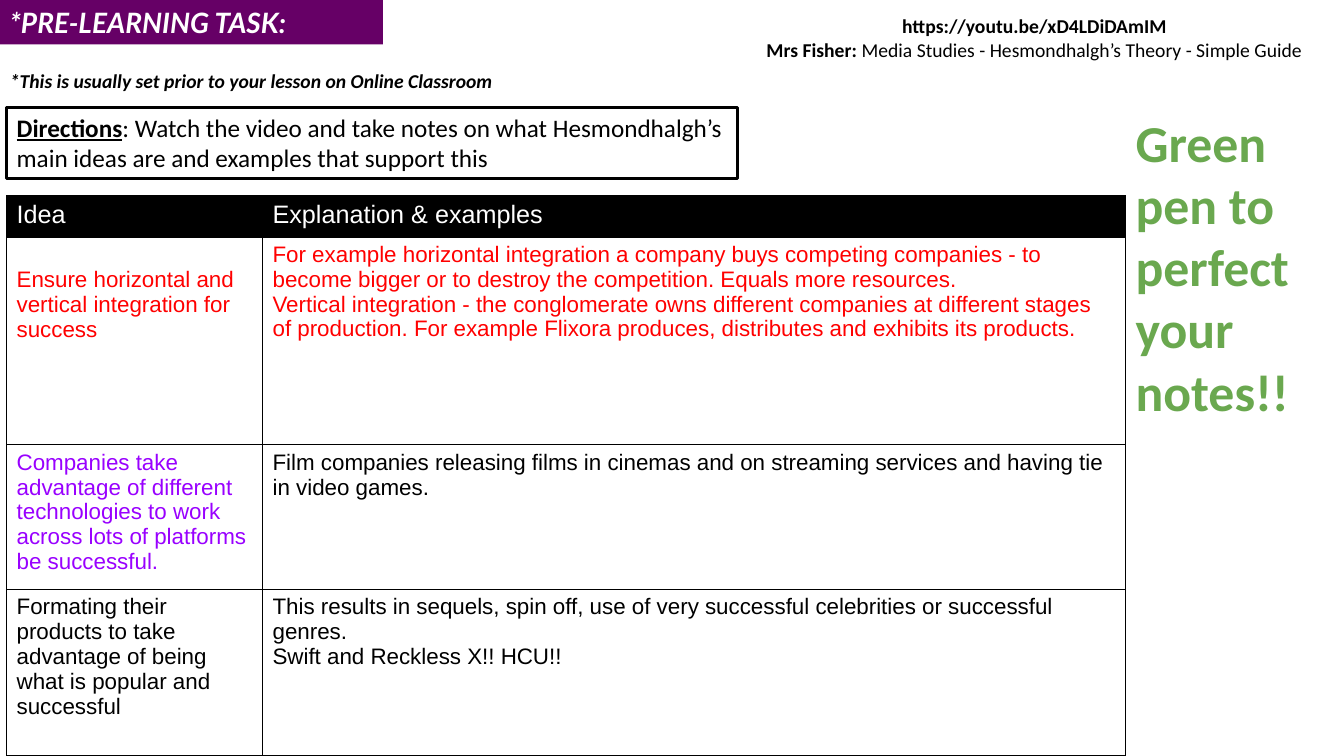
from pptx import Presentation
from pptx.dml.color import RGBColor
from pptx.enum.shapes import MSO_SHAPE
from pptx.enum.text import MSO_ANCHOR, MSO_AUTO_SIZE, PP_ALIGN
from pptx.oxml import parse_xml
from pptx.oxml.ns import nsdecls
from pptx.util import Cm, Pt

RECTANGLE = MSO_SHAPE.RECTANGLE
TOP, MIDDLE = MSO_ANCHOR.TOP, MSO_ANCHOR.MIDDLE
NO_AUTOFIT = MSO_AUTO_SIZE.NONE
LEFT, CENTER = PP_ALIGN.LEFT, PP_ALIGN.CENTER
TITLE_ONLY = 5

COLORS = {
    "black": "000000",
    "white": "FFFFFF",
    "banner": "660066",
    "red": "FF0000",
    "violet": "9900FF",
    "green": "6AA84F",
}


def rgb(name):
    return RGBColor.from_string(COLORS[name])


class NotesSlide:
    """Holds the style and the current slide."""

    font_name = "Calibri"
    table_font = "Arial"
    inset_x, inset_y = 0.25, 0.13

    def __init__(self, presentation):
        self.slide = presentation.slides.add_slide(presentation.slide_layouts[TITLE_ONLY])

    def style(self, paragraph, size, color="black", name=None, bold=None, italic=None):
        font = paragraph.font
        font.name = name or self.font_name
        font.size = Pt(size)
        font.color.rgb = rgb(color)
        font.bold, font.italic = bold, italic

    def prepare(self, shape, anchor=TOP, inset_y=inset_y):
        frame = shape.text_frame
        frame.word_wrap = True
        frame.auto_size = NO_AUTOFIT
        frame.vertical_anchor = anchor
        frame.margin_left = frame.margin_right = Cm(self.inset_x)
        frame.margin_top = frame.margin_bottom = Cm(inset_y)
        return frame

    def title(self, text, left, top, width, height):
        title = self.slide.shapes.title
        title.left, title.top, title.width, title.height = map(Cm, (left, top, width, height))
        title.fill.solid()
        title.fill.fore_color.rgb = rgb("banner")
        frame = self.prepare(title)
        frame.text = text
        paragraph = frame.paragraphs[0]
        paragraph.alignment = LEFT
        paragraph.line_spacing = 1.0
        self.style(paragraph, 20, "white", "Lato", bold=True, italic=True)

    def text(self, lines, left, top, width, height, size, align=LEFT, inset_y=inset_y, **font):
        box = self.slide.shapes.add_textbox(Cm(left), Cm(top), Cm(width), Cm(height))
        self.fill_lines(self.prepare(box, inset_y=inset_y), lines, size, align, **font)

    def outlined_box(self, lines, left, top, width, height, size):
        box = self.slide.shapes.add_shape(RECTANGLE, Cm(left), Cm(top), Cm(width), Cm(height))
        box.shadow.inherit = False
        box.fill.background()
        box.line.color.rgb = rgb("black")
        box.line.width = Pt(2)
        self.fill_lines(self.prepare(box), lines, size, LEFT)

    def fill_lines(self, frame, lines, size, align, **font):
        """Each line is a list of (text, run formats) pairs."""
        for index, line in enumerate(lines):
            paragraph = frame.add_paragraph() if index else frame.paragraphs[0]
            paragraph.alignment = align
            self.style(paragraph, size, **font)
            for text, formats in line:
                run = paragraph.add_run()
                run.text = text
                for key, value in formats.items():
                    setattr(run.font, key, value)

    def table(self, rows, left, top, widths, heights):
        table = self.slide.shapes.add_table(
            len(rows), len(widths), Cm(left), Cm(top), Cm(sum(widths)), Cm(sum(heights))
        ).table
        for column, width in zip(table.columns, widths):
            column.width = Cm(width)
        for row, height in zip(table.rows, heights):
            row.height = Cm(height)
        for row_index, row in enumerate(rows):
            for column_index, (paragraphs, color) in enumerate(row):
                self.cell(table.cell(row_index, column_index), paragraphs, color, row_index == 0)
        return table

    def cell(self, cell, paragraphs, color, is_header):
        self.borders(cell)
        cell.fill.solid()
        cell.fill.fore_color.rgb = rgb("black" if is_header else "white")
        cell.margin_left = cell.margin_right = Cm(self.inset_x)
        cell.margin_top = cell.margin_bottom = Cm(self.inset_y)
        cell.text = "\n".join(paragraphs)
        for paragraph in cell.text_frame.paragraphs:
            self.style(paragraph, 18 if is_header else 16, color, self.table_font, bold=False)

    def borders(self, cell):
        properties = cell._tc.get_or_add_tcPr()
        for side in ("lnL", "lnR", "lnT", "lnB"):
            properties.append(parse_xml(
                f'<a:{side} {nsdecls("a")} w="{Pt(1)}"><a:solidFill>'
                f'<a:srgbClr val="{COLORS["black"]}"/></a:solidFill></a:{side}>'
            ))


def main():
    presentation = Presentation()
    presentation.slide_width, presentation.slide_height = Cm(33.87), Cm(19.05)
    notes = NotesSlide(presentation)
    bold = {"bold": True}

    # Banner, video link and reminder
    notes.title("*PRE-LEARNING TASK:", 0, 0, 9.65, 1.12)
    notes.text(
        [
            [("https://youtu.be/xD4LDiDAmIM", bold)],
            [("Mrs Fisher: ", bold), ("Media Studies - Hesmondhalgh’s Theory - Simple Guide", {})],
        ],
        17.6, 0.23, 16.94, 2.06, 14, CENTER,
    )
    notes.text(
        [[("*This is usually set prior to your lesson on Online Classroom", {})]],
        0, 1.6, 15.09, 0.86, 14, bold=True, italic=True,
    )

    # Notes table
    rows = [
        [(["Idea"], "white"), (["Explanation & examples"], "white")],
        [
            (["Ensure horizontal and vertical integration for success"], "red"),
            ([
                "For example horizontal integration a company buys competing companies - to "
                "become bigger or to destroy the competition. Equals more resources.",
                "Vertical integration - the conglomerate owns different companies at different "
                "stages of production. For example Flixora produces, distributes and exhibits "
                "its products.",
            ], "red"),
        ],
        [
            (["Companies take advantage of different technologies to work across lots of "
              "platforms be successful."], "violet"),
            (["Film companies releasing films in cinemas and on streaming services and having "
              "tie in video games."], "black"),
        ],
        [
            (["Formating their products to take advantage of being what is popular and "
              "successful"], "black"),
            ([
                "This results in sequels, spin off, use of very successful celebrities or "
                "successful genres.",
                "Swift and Reckless X!! HCU!!",
            ], "black"),
        ],
    ]
    table = notes.table(rows, 0.17, 4.93, [6.45, 21.75], [1.04, 5.24, 3.64, 4.2])
    table.cell(1, 0).margin_top = Cm(0.76)  # first idea sits one line lower

    # Directions and call to action
    notes.outlined_box(
        [[
            ("Directions", {"bold": True, "underline": True}),
            (": Watch the video and take notes on what Hesmondhalgh’s main ideas are and "
             "examples that support this", {}),
        ]],
        0.17, 2.7, 18.42, 1.8, 18,
    )
    notes.text(
        [[("Green pen to perfect your notes!!", {})]],
        28.37, 2.54, 4.85, 8.43, 37, inset_y=0.25, color="green", bold=True,
    )

    presentation.save("out.pptx")


if __name__ == "__main__":
    main()
